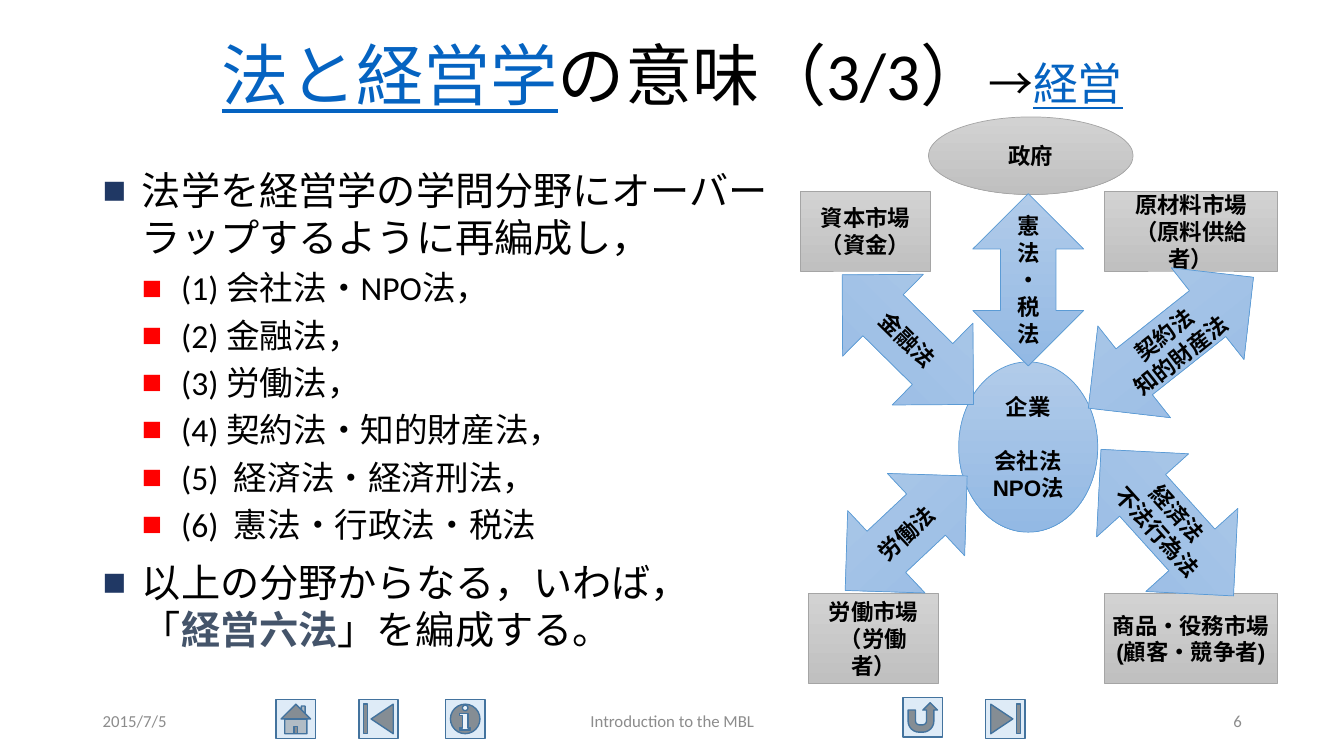
from lxml import etree
from pptx import Presentation
from pptx.dml.color import RGBColor
from pptx.enum.shapes import MSO_SHAPE
from pptx.enum.text import MSO_ANCHOR, PP_ALIGN
from pptx.oxml.ns import qn
from pptx.util import Inches, Pt

LEFT, CENTER, RIGHT = PP_ALIGN.LEFT, PP_ALIGN.CENTER, PP_ALIGN.RIGHT
TOP, MIDDLE = MSO_ANCHOR.TOP, MSO_ANCHOR.MIDDLE
OVAL, BOX = MSO_SHAPE.OVAL, MSO_SHAPE.RECTANGLE
ACROSS, UPRIGHT = MSO_SHAPE.LEFT_RIGHT_ARROW, MSO_SHAPE.UP_DOWN_ARROW

BLACK = RGBColor(0x00, 0x00, 0x00)
LINK_BLUE = RGBColor(0x05, 0x63, 0xC1)
SLATE = RGBColor(0x44, 0x54, 0x6A)
FOOTER_GRAY = RGBColor(0x8C, 0x8C, 0x8C)
BUTTON_FILL = RGBColor(0xDE, 0xEB, 0xF7)
BUTTON_LINE = RGBColor(0x43, 0x73, 0x9E)
NAVY = RGBColor(0x20, 0x38, 0x64)
RED = RGBColor(0xFF, 0x00, 0x00)
GRAY = (RGBColor(0xD2, 0xD2, 0xD2), RGBColor(0xC0, 0xC0, 0xC0), RGBColor(0xA5, 0xA5, 0xA5))
BLUE = (RGBColor(0xB1, 0xCB, 0xE9), RGBColor(0x93, 0xB9, 0xE4), RGBColor(0x5B, 0x9B, 0xD5))

deck = Presentation()
deck.slide_width, deck.slide_height = Inches(13.33), Inches(7.5)
page = deck.slides.add_slide(deck.slide_layouts[6])
COLUMN, ROW = deck.slide_width / 100, deck.slide_height / 100


def grid(left, top, width, height):
    return int(left * COLUMN), int(top * ROW), int(width * COLUMN), int(height * ROW)


def write(para, text, size, name, color, align, bold=False):
    para.text = text
    para.alignment = align
    para.font.size = Pt(size)
    para.font.name = name
    para.font.bold = bold
    para.font.color.rgb = color


buttons = [
    (MSO_SHAPE.ACTION_BUTTON_HOME, 20.55, 92.5),
    (MSO_SHAPE.ACTION_BUTTON_BEGINNING, 26.7, 92.5),
    (MSO_SHAPE.ACTION_BUTTON_END, 73.35, 92.5),
    (MSO_SHAPE.ACTION_BUTTON_RETURN, 67.2, 92.3),
    (MSO_SHAPE.ACTION_BUTTON_INFORMATION, 33.15, 92.5),
]
for kind, left, top in buttons:
    button = page.shapes.add_shape(kind, *grid(left, top, 2.93, 5.2))
    button.shadow.inherit = False
    button.fill.solid()
    button.fill.fore_color.rgb = BUTTON_FILL
    button.line.color.rgb = BUTTON_LINE
    button.line.width = Pt(1)

title = page.shapes.add_textbox(*grid(6.9, 3.07, 86.25, 14.8)).text_frame
title.word_wrap = True
title.vertical_anchor = MIDDLE
para = title.paragraphs[0]
para.alignment = CENTER
para.line_spacing = 0.9
para.font.name = "Calibri"
title_spans = [
    ("法と経営学", 48, LINK_BLUE),
    ("の意味（3/3）", 48, BLACK),
    ("→", 32, BLACK),
    ("経営", 32, LINK_BLUE),
]
for text, size, color in title_spans:
    span = para.add_run()
    span.text = text
    span.font.size = Pt(size)
    span.font.color.rgb = color
    span.font.underline = color == LINK_BLUE

footers = [
    ("2015/7/5", 6.9, 22.5, LEFT),
    ("Introduction to the MBL", 33.15, 33.75, CENTER),
    ("6", 70.65, 22.5, RIGHT),
]
for text, left, width, align in footers:
    frame = page.shapes.add_textbox(*grid(left, 92.67, width, 5.33)).text_frame
    frame.word_wrap = True
    frame.vertical_anchor = MIDDLE
    write(frame.paragraphs[0], text, 12, "Calibri", FOOTER_GRAY, align)

body = page.shapes.add_textbox(*grid(6.9, 21.33, 53.7, 68)).text_frame
body.word_wrap = True
items = [
    (0, "法学を経営学の学問分野にオーバー\vラップするように再編成し，"),
    (1, "(1) 会社法・NPO法，"),
    (1, "(2) 金融法，"),
    (1, "(3) 労働法，"),
    (1, "(4) 契約法・知的財産法，"),
    (1, "(5)  経済法・経済刑法，"),
    (1, "(6)  憲法・行政法・税法"),
    (0, "以上の分野からなる，いわば，\v「"),
]
for index, (level, text) in enumerate(items):
    para = body.add_paragraph() if index else body.paragraphs[0]
    write(para, text, (28, 24)[level], "Calibri", BLACK, LEFT)
    para.level = level
    para.space_before = Pt((10, 5)[level])
    props = para._p.get_or_add_pPr()
    props.set("marL", str(Inches(0.39 * (level + 1))))
    props.set("indent", str(-Inches(0.39)))
    defaults = props.find(qn("a:defRPr"))
    bullet_color = etree.Element(qn("a:buClr"))
    etree.SubElement(bullet_color, qn("a:srgbClr"), val=str((NAVY, RED)[level]))
    defaults.addprevious(bullet_color)
    defaults.addprevious(etree.Element(qn("a:buFont"), typeface="Arial"))
    defaults.addprevious(etree.Element(qn("a:buChar"), char="■"))

emphasis = para.add_run()
emphasis.text = "経営六法"
emphasis.font.bold = True
emphasis.font.color.rgb = SLATE
para.add_run().text = "」を編成する。"

diagram = [
    (OVAL, (69.08, 15.47, 15.23, 10.27), 0, GRAY, ["政府"]),
    (OVAL, (71.33, 47.87, 10.35, 22.53), 0, BLUE, ["企業", "会社法", "NPO法"]),
    (BOX, (59.55, 25.33, 9.68, 10.53), 0, GRAY, ["資本市場", "（資金）"]),
    (BOX, (60.15, 78.53, 9.68, 11.87), 0, GRAY, ["労働市場", "（労働者）"]),
    (BOX, (82.2, 25.33, 12.83, 10.53), 0, GRAY, ["原材料市場", "（原料供給者）"]),
    (BOX, (82.2, 78.53, 12.83, 11.87), 0, GRAY, ["商品・役務市場", "(顧客・競争者)"]),
    (ACROSS, (60.68, 37.33, 13.73, 15.2), 44.6, BLUE, ["金融法"]),
    (ACROSS, (61.2, 63.07, 12.45, 14.93), 316.8, BLUE, ["労働法"]),
    (ACROSS, (79.28, 37.6, 15.68, 15.47), 321.6, BLUE, ["契約法\v知的財産法"]),
    (ACROSS, (79.5, 60.93, 14.7, 16.4), 47.9, BLUE, ["経済法\v不法行為法"]),
    (UPRIGHT, (72.38, 25.6, 8.25, 22.8), 0, BLUE, ["憲法\v・\v税法"]),
]
for kind, area, turn, (light, dark, edge), lines in diagram:
    shape = page.shapes.add_shape(kind, *grid(*area))
    shape.shadow.inherit = False
    shape.rotation = turn
    shape.fill.gradient()
    shape.fill.gradient_angle = 270
    for stop, color in zip(shape.fill.gradient_stops, (light, dark)):
        stop.color.rgb = color
    shape.line.color.rgb = edge
    shape.line.width = Pt(0.5)
    frame = shape.text_frame
    frame.word_wrap = lines[0] != "商品・役務市場"
    frame.vertical_anchor = TOP if "契約法" in lines[0] else MIDDLE
    for index, text in enumerate(lines):
        para = frame.add_paragraph() if index else frame.paragraphs[0]
        write(para, text, 16, "Arial", BLACK, CENTER, True)
        if text == "会社法":
            para.space_before = Pt(19)

deck.save("out.pptx")
